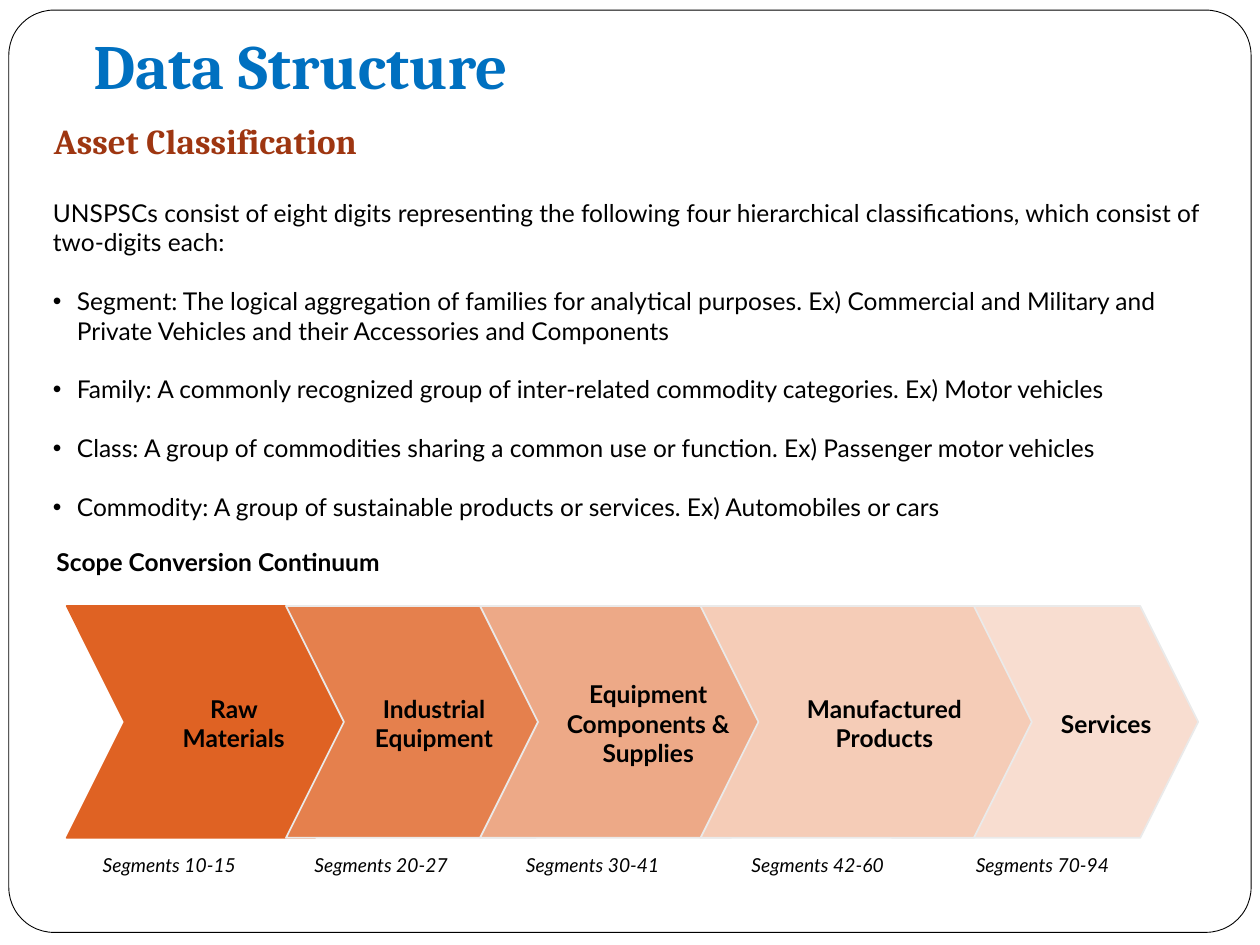
from dataclasses import dataclass

from lxml.etree import SubElement
from pptx import Presentation
from pptx.dml.color import RGBColor
from pptx.enum.shapes import MSO_SHAPE
from pptx.enum.text import MSO_ANCHOR, MSO_AUTO_SIZE, PP_ALIGN
from pptx.oxml.ns import qn
from pptx.util import Pt

EMU_PER_PX = 9144  # 100 px to the inch
SLIDE_SIZE = (1000, 750)
CHEVRON_TOP, CHEVRON_HEIGHT = 481, 184
LABEL_MIDDLE = 574
CAPTION_TOP, CAPTION_HEIGHT = 672, 29


@dataclass(frozen=True)
class Theme:
    heading_font: str = "Cambria"
    body_font: str = "Lato"
    title_color: str = "0070C0"
    subtitle_color: str = "9E3611"
    text_color: str = "000000"
    paper: str = "FFFFFF"
    chevron_line: str = "EAEAEA"
    title_size: int = 36
    subtitle_size: int = 20
    body_size: int = 14
    caption_size: int = 11
    paragraph_gap: float = 16.8


def px(length):
    return length * EMU_PER_PX


def rgb(color):
    return RGBColor.from_string(color)


class SlideBuilder:
    """Holds the theme and the slide that its methods draw on."""

    def __init__(self, slide, theme):
        self.slide = slide
        self.theme = theme

    def place(self, shape, box):
        shape.left, shape.top, shape.width, shape.height = map(px, box)

    def style(self, paragraph, size, color=None, font=None, bold=False,
              italic=False, align=PP_ALIGN.LEFT):
        paragraph.alignment = align
        paragraph.font.name = font or self.theme.body_font
        paragraph.font.size = Pt(size)
        paragraph.font.bold = bold
        paragraph.font.italic = italic
        paragraph.font.color.rgb = rgb(color or self.theme.text_color)

    def shape(self, kind, box, adjustment, fill, line, line_width):
        shape = self.slide.shapes.add_shape(kind, *map(px, box))
        shape.adjustments[0] = adjustment
        shape.shadow.inherit = False
        shape.fill.solid()
        shape.fill.fore_color.rgb = rgb(fill)
        shape.line.color.rgb = rgb(line)
        shape.line.width = Pt(line_width)
        return shape

    def frame(self, box):
        """Draw the rounded border behind everything else."""
        shape = self.shape(MSO_SHAPE.ROUNDED_RECTANGLE, box, 0.049,
                           self.theme.paper, self.theme.text_color, 0.5)
        shape.element.getparent().insert(2, shape.element)

    def chevron(self, left, width, fill, line):
        self.shape(MSO_SHAPE.CHEVRON, (left, CHEVRON_TOP, width, CHEVRON_HEIGHT),
                   0.25, fill, line, 1)

    def title(self, text, box):
        title = self.slide.shapes.title
        self.place(title, box)
        title.text_frame.text = text
        title.text_frame.auto_size = MSO_AUTO_SIZE.NONE
        title.text_frame.vertical_anchor = MSO_ANCHOR.BOTTOM
        title.text_frame.margin_bottom = px(10)
        self.style(title.text_frame.paragraphs[0], self.theme.title_size,
                   self.theme.title_color, self.theme.heading_font, bold=True)

    def body(self, intro, bullets, box):
        body = self.slide.placeholders[1]
        self.place(body, box)
        frame = body.text_frame
        frame.text = "\n".join([intro, *bullets])
        frame.auto_size = MSO_AUTO_SIZE.NONE
        for index, paragraph in enumerate(frame.paragraphs):
            self.style(paragraph, self.theme.body_size)
            paragraph.space_before = Pt(self.theme.paragraph_gap if index else 0)
            properties = paragraph.element.get_or_add_pPr() if hasattr(
                paragraph, "element") else paragraph._p.get_or_add_pPr()
            indent = px(19) if index else 0
            properties.set("marL", str(indent))
            properties.set("indent", str(-indent))
            if index:
                bullet = properties.makeelement(qn("a:buChar"), {"char": "•"})
            else:
                bullet = properties.makeelement(qn("a:buNone"), {})
            properties.find(qn("a:defRPr")).addprevious(bullet)

    def text(self, text, box, size, anchor=MSO_ANCHOR.TOP, wrap=True, **style):
        frame = self.slide.shapes.add_textbox(*map(px, box)).text_frame
        frame.word_wrap = wrap
        frame.vertical_anchor = anchor
        frame.text = text
        for paragraph in frame.paragraphs:
            self.style(paragraph, size, **style)


INTRO = ("UNSPSCs consist of eight digits representing the following four "
         "hierarchical classifications, which consist of two-digits each:")
BULLETS = [
    "Segment: The logical aggregation of families for analytical purposes. "
    "Ex) Commercial and Military and Private Vehicles and their Accessories "
    "and Components",
    "Family: A commonly recognized group of inter-related commodity categories. "
    "Ex) Motor vehicles",
    "Class: A group of commodities sharing a common use or function. "
    "Ex) Passenger motor vehicles",
    "Commodity: A group of sustainable products or services. "
    "Ex) Automobiles or cars",
]

# left, width, fill, line; the later ones overlap the earlier ones
CHEVRONS = [
    (53, 243, "DF6223", "DF6223"),
    (227, 244, "E5804D", Theme.chevron_line),
    (381, 245, "EDA987", Theme.chevron_line),
    (708, 243, "F8DDD0", Theme.chevron_line),
    (556, 263, "F5CCB7", Theme.chevron_line),
]

# label, its left and width, segment range, its left and width
STAGES = [
    ("Raw Materials", 116, 139, "10-15", 61, 147),
    ("Industrial Equipment", 262, 165, "20-27", 227, 151),
    ("Equipment\nComponents & Supplies", 419, 191, "30-41", 392, 157),
    ("Manufactured Products", 599, 206, "42-60", 564, 170),
    ("Services", 813, 130, "70-94", 746, 163),
]


def main():
    presentation = Presentation()
    presentation.slide_width, presentation.slide_height = map(px, SLIDE_SIZE)
    theme = Theme()
    slide = presentation.slides.add_slide(presentation.slide_layouts[1])
    builder = SlideBuilder(slide, theme)

    builder.frame((7, 8, 986, 732))
    builder.title("Data Structure", (64, 29, 850, 62))
    builder.text("Asset Classification", (33, 90, 942, 44), theme.subtitle_size,
                 color=theme.subtitle_color, font=theme.heading_font, bold=True)
    builder.body(INTRO, BULLETS, (32, 152, 943, 276))
    builder.text("Scope Conversion Continuum", (35, 429, 310, 34),
                 theme.body_size, wrap=False, bold=True)

    for chevron in CHEVRONS:
        builder.chevron(*chevron)
    label_height = 80
    for label, left, width, segments, caption_left, caption_width in STAGES:
        builder.text(label, (left, LABEL_MIDDLE - label_height // 2, width, label_height),
                     theme.body_size, MSO_ANCHOR.MIDDLE, bold=True,
                     align=PP_ALIGN.CENTER)
        builder.text(f"Segments {segments}",
                     (caption_left, CAPTION_TOP, caption_width, CAPTION_HEIGHT),
                     theme.caption_size, italic=True, align=PP_ALIGN.CENTER)

    presentation.save("out.pptx")


if __name__ == "__main__":
    main()
